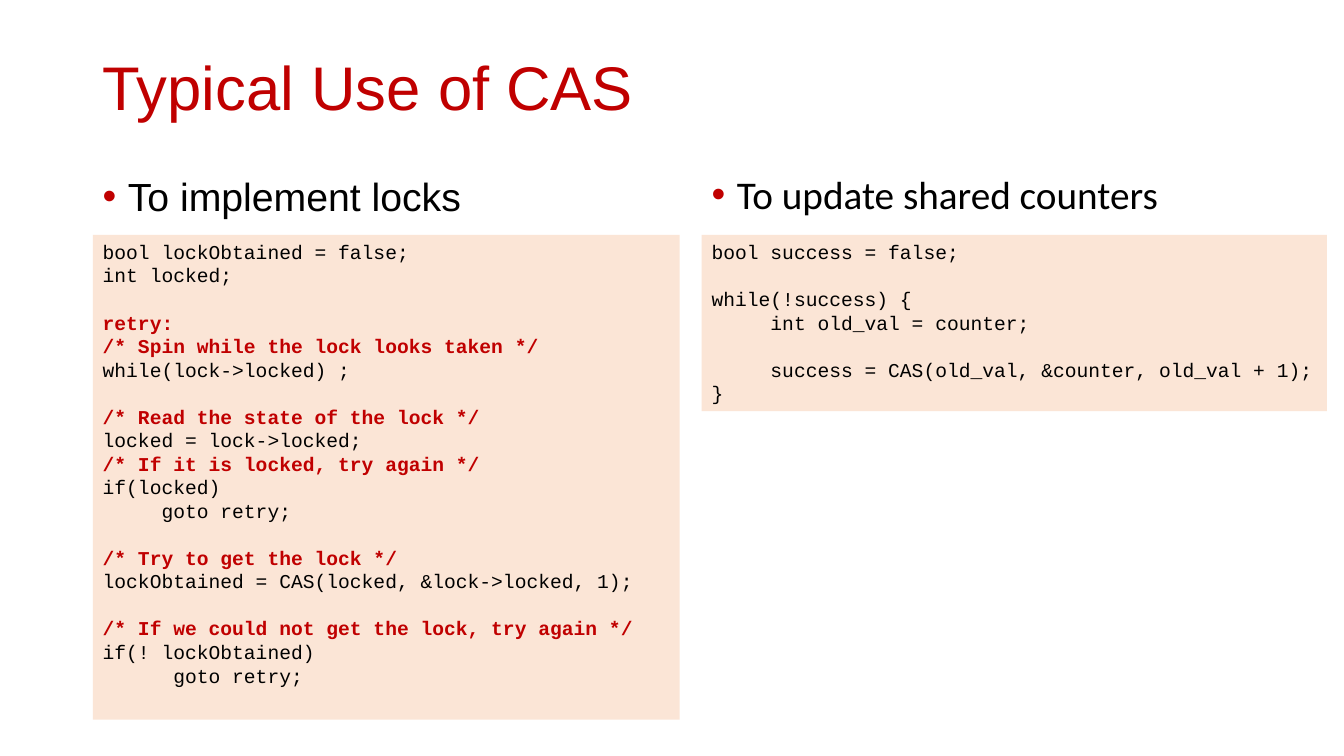
import pptx
import pptx.util
import pptx.dml.color
import pptx.enum.shapes
import pptx.enum.text
import pptx.oxml.ns
import lxml.etree

PX = 9144  # EMU: 100 px to the inch
RED = pptx.dml.color.RGBColor(0xC0, 0x00, 0x00)
BLACK = pptx.dml.color.RGBColor(0x00, 0x00, 0x00)
PEACH = pptx.dml.color.RGBColor(0xFB, 0xE5, 0xD6)

LEFT_X, RIGHT_X, CODE_Y = 92, 696, 233
CODE_SIZE = 14
BLANK_LINE = 1.2 * CODE_SIZE

LOCK_CODE = """bool lockObtained = false;
int locked;

retry:
/* Spin while the lock looks taken */
while(lock->locked) ;

/* Read the state of the lock */
locked = lock->locked;
/* If it is locked, try again */
if(locked)
     goto retry;

/* Try to get the lock */
lockObtained = CAS(locked, &lock->locked, 1);

/* If we could not get the lock, try again */
if(! lockObtained)
      goto retry;"""

COUNTER_CODE = """bool success = false;

while(!success) {
     int old_val = counter;

     success = CAS(old_val, &counter, old_val + 1);
}"""


def emu(*lengths):
    return [pptx.util.Emu(n * PX) for n in lengths]


def add_text(p, text, size=28, font="Arial", color=BLACK, bold=False):
    r = p.add_run()
    r.text = text
    r.font.size = pptx.util.Pt(size)
    r.font.name = font
    r.font.color.rgb = color
    r.font.bold = bold


def add_box(s, x, y, w, h, anchor=pptx.enum.text.MSO_ANCHOR.TOP):
    """Add a wrapping text box and return its first paragraph."""
    tf = s.shapes.add_textbox(*emu(x, y, w, h)).text_frame
    tf.word_wrap = True
    tf.vertical_anchor = anchor
    p = tf.paragraphs[0]
    p.line_spacing = 0.9
    return p


def add_bullet(p, color):
    pPr = p._p.get_or_add_pPr()
    pPr.set("marL", str(25 * PX))
    pPr.set("indent", str(-25 * PX))
    qn = pptx.oxml.ns.qn
    buClr = lxml.etree.SubElement(pPr, qn("a:buClr"))
    lxml.etree.SubElement(buClr, qn("a:srgbClr"), val=str(color))
    lxml.etree.SubElement(pPr, qn("a:buFont"), typeface="Arial")
    lxml.etree.SubElement(pPr, qn("a:buChar"), char="•")


def add_heading(s, x, y, w, h, text, font):
    p = add_box(s, x, y, w, h)
    add_bullet(p, RED)
    add_text(p, text, font=font)


def add_code(s, x, y, w, h, code):
    """Add a code panel; labels and comments are bold red."""
    sp = s.shapes.add_shape(pptx.enum.shapes.MSO_SHAPE.RECTANGLE, *emu(x, y, w, h))
    sp.shadow.inherit = False
    sp.fill.solid()
    sp.fill.fore_color.rgb = PEACH
    sp.line.fill.background()
    tf = sp.text_frame
    tf.word_wrap = True
    tf.vertical_anchor = pptx.enum.text.MSO_ANCHOR.TOP
    for i, block in enumerate(code.split("\n\n")):
        for j, line in enumerate(block.split("\n")):
            p = tf.paragraphs[0] if i == j == 0 else tf.add_paragraph()
            p.alignment = pptx.enum.text.PP_ALIGN.LEFT
            if i > 0 and j == 0:
                p.space_before = pptx.util.Pt(BLANK_LINE)
            marked = line.startswith("/*") or line.endswith(":")
            add_text(p, line, size=CODE_SIZE, font="Courier New",
                     color=RED if marked else BLACK, bold=marked)


def main():
    prs = pptx.Presentation()
    prs.slide_width, prs.slide_height = emu(1333, 750)
    s = prs.slides.add_slide(prs.slide_layouts[6])
    title = add_box(s, LEFT_X, 17, 1150, 145, pptx.enum.text.MSO_ANCHOR.MIDDLE)
    add_text(title, "Typical Use of CAS", size=44, color=RED)
    add_heading(s, LEFT_X, 171, 449, 320, "To implement locks", "Arial")
    add_code(s, LEFT_X, CODE_Y, 582, 481, LOCK_CODE)
    add_heading(s, RIGHT_X, 169, 484, 74, "To update shared counters", "Calibri")
    add_code(s, RIGHT_X, CODE_Y, 620, 175, COUNTER_CODE)
    prs.save("out.pptx")


if __name__ == "__main__":
    main()
